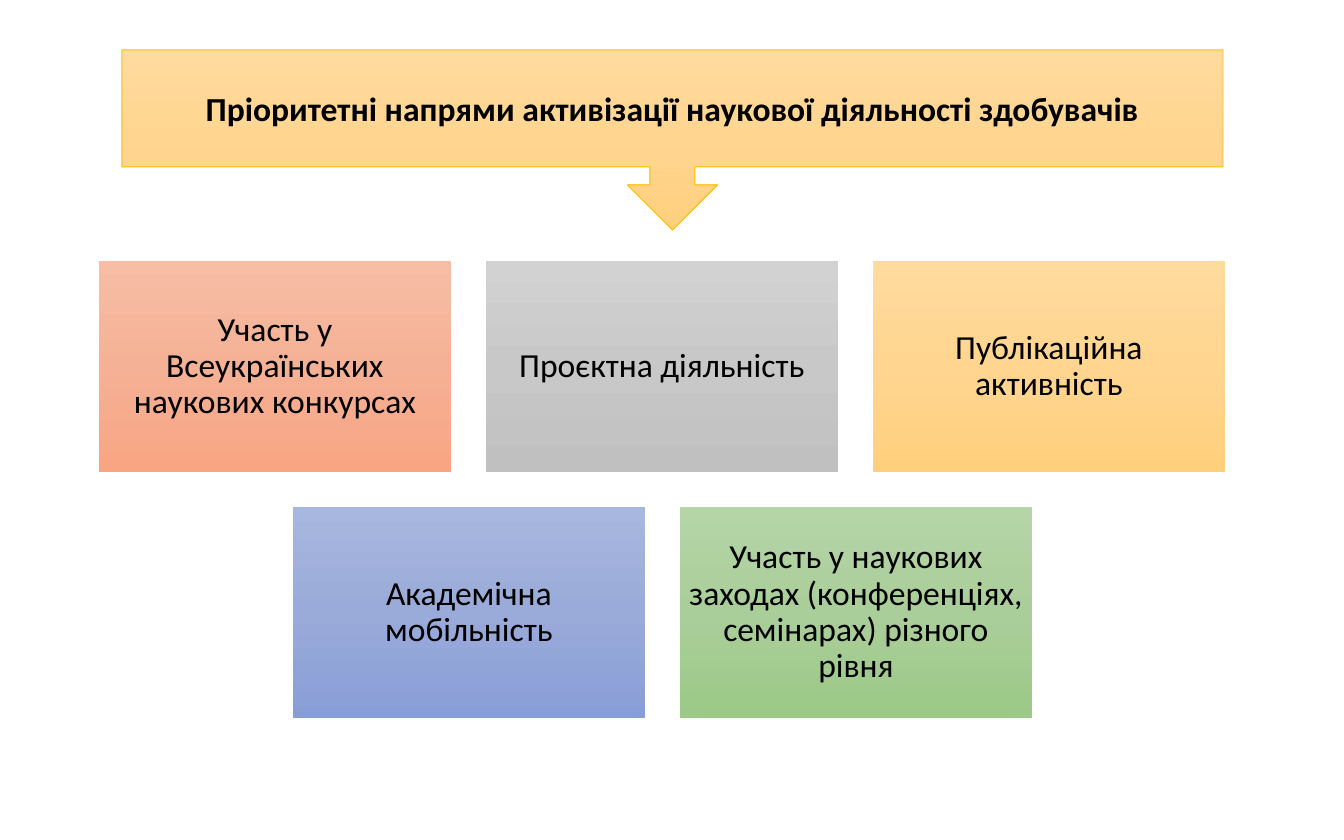
"""Build a slide of priority directions for students' research activity."""
from copy import deepcopy
from typing import NamedTuple, Optional

from pptx import Presentation
from pptx.dml.color import RGBColor
from pptx.enum.shapes import MSO_SHAPE
from pptx.enum.text import MSO_ANCHOR, PP_ALIGN
from pptx.oxml.ns import qn
from pptx.shapes.autoshape import Shape
from pptx.slide import Slide
from pptx.util import Emu, Pt

RECTANGLE = MSO_SHAPE.RECTANGLE
ARROW_CALLOUT = MSO_SHAPE.DOWN_ARROW_CALLOUT
CENTER = PP_ALIGN.CENTER
MIDDLE = MSO_ANCHOR.MIDDLE

PX_PER_INCH = 134.4
FONT = "Calibri"
BLACK = RGBColor(0x00, 0x00, 0x00)
AMBER = RGBColor(0xFF, 0xC0, 0x00)


class Gradient(NamedTuple):
    top: RGBColor
    middle: RGBColor
    bottom: RGBColor


class Box(NamedTuple):
    left: int
    top: int
    width: int
    height: int


class Direction(NamedTuple):
    label: str
    gradient: Gradient


def gradient_of(*codes: str) -> Gradient:
    return Gradient(*map(RGBColor.from_string, codes))


CORAL = gradient_of("F7BDA5", "F5B196", "F8A582")
GREY = gradient_of("D2D2D2", "C8C8C8", "C0C0C0")
GOLD = gradient_of("FFDB9E", "FFD590", "FFD07C")
BLUE = gradient_of("A8B7DF", "9AABD9", "889ED7")
GREEN = gradient_of("B5D5A7", "AACE9A", "9CC987")

HEADING = "Пріоритетні напрями активізації наукової діяльності здобувачів"
HEADING_BOX = Box(122, 50, 1101, 180)
DIRECTION_ROWS = (
    (
        Direction("Участь у Всеукраїнських наукових конкурсах", CORAL),
        Direction("Проєктна діяльність", GREY),
        Direction("Публікаційна активність", GOLD),
    ),
    (
        Direction("Академічна мобільність", BLUE),
        Direction("Участь у наукових заходах (конференціях, семінарах) різного рівня", GREEN),
    ),
)
CARD_WIDTH, CARD_HEIGHT = 352, 211
CARD_GAP = 35
CARDS_CENTER, CARDS_TOP = 662, 261
CARD_INSET = 9


def px(length: int) -> Emu:
    return Emu(round(length * 914400 / PX_PER_INCH))


def write_text(shape: Shape, text: str, *, bold: bool = False,
               line_spacing: float = 1.0, inset: Optional[int] = None) -> None:
    frame = shape.text_frame
    frame.word_wrap = True
    frame.vertical_anchor = MIDDLE
    if inset is not None:
        frame.margin_left = frame.margin_right = px(inset)
        frame.margin_top = frame.margin_bottom = px(inset)
    paragraph = frame.paragraphs[0]
    paragraph.alignment = CENTER
    paragraph.line_spacing = line_spacing
    run = paragraph.add_run()
    run.text = text
    run.font.name = FONT
    run.font.size = Pt(18)
    run.font.bold = bold
    run.font.color.rgb = BLACK


def draw_block(slide: Slide, preset: MSO_SHAPE, box: Box, gradient: Gradient,
               outline: Optional[RGBColor] = None) -> Shape:
    block = slide.shapes.add_shape(preset, *map(px, box))
    block.shadow.inherit = False
    block.fill.gradient()
    block.fill.gradient_angle = 270
    stop_list = block.fill._xPr.find(".//" + qn("a:gsLst"))
    stop_list.insert(1, deepcopy(stop_list[0]))
    for index, (stop, color) in enumerate(zip(block.fill.gradient_stops, gradient)):
        stop.position = index / 2
        stop.color.rgb = color
    if outline is None:
        block.line.fill.background()
    else:
        block.line.color.rgb = outline
        block.line.width = Pt(0.5)
    return block


def draw_row(slide: Slide, directions: tuple[Direction, ...], top: int) -> None:
    pitch = CARD_WIDTH + CARD_GAP
    left = CARDS_CENTER - (len(directions) * pitch - CARD_GAP) // 2
    for column, direction in enumerate(directions):
        box = Box(left + column * pitch, top, CARD_WIDTH, CARD_HEIGHT)
        card = draw_block(slide, RECTANGLE, box, direction.gradient)
        write_text(card, direction.label, line_spacing=0.9, inset=CARD_INSET)


def main() -> None:
    presentation = Presentation()
    presentation.slide_width = px(1344)
    presentation.slide_height = px(840)
    slide = presentation.slides.add_slide(presentation.slide_layouts[6])
    heading = draw_block(slide, ARROW_CALLOUT, HEADING_BOX, GOLD, outline=AMBER)
    write_text(heading, HEADING, bold=True)
    for row, directions in enumerate(DIRECTION_ROWS):
        draw_row(slide, directions, CARDS_TOP + row * (CARD_HEIGHT + CARD_GAP))
    presentation.save("out.pptx")


if __name__ == "__main__":
    main()
